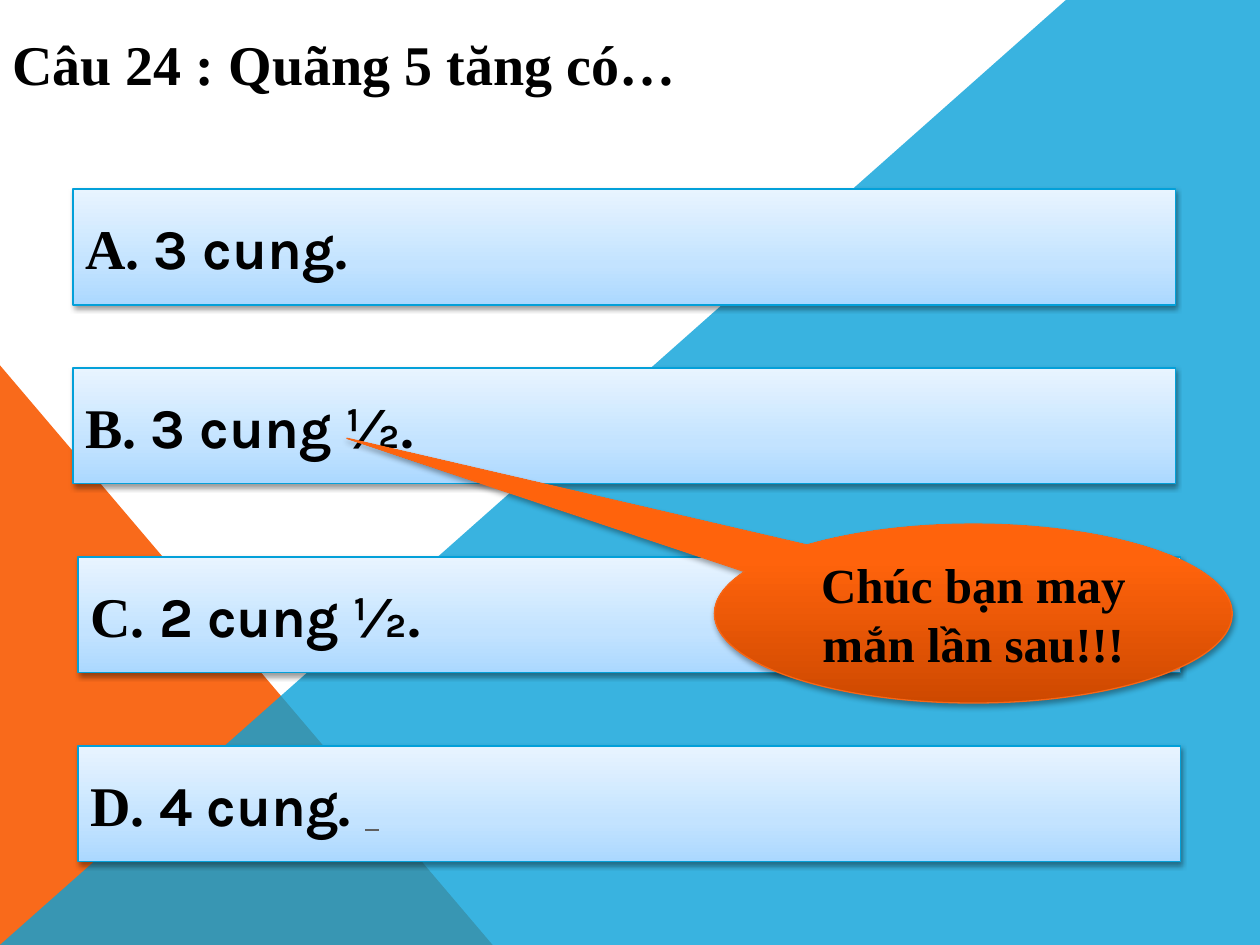
"""Build the quiz slide about the major fifth, with four answers and a callout."""
from dataclasses import dataclass

from lxml.etree import SubElement
from pptx import Presentation
from pptx.dml.color import RGBColor
from pptx.enum.shapes import MSO_SHAPE
from pptx.enum.text import MSO_ANCHOR, PP_ALIGN
from pptx.oxml.ns import qn
from pptx.util import Inches, Pt


@dataclass(frozen=True)
class Style:
    stops: tuple[tuple[int, str], ...]
    line: str
    shadow_alpha: int
    shadow_dist: float


@dataclass(frozen=True)
class Theme:
    orange: str = "F96A1B"
    blue: str = "08A1D9"
    ink: str = "000000"
    muted: str = "5F5F5F"
    serif: str = "Times New Roman"
    sans: str = "Karla"
    large: int = 32
    medium: int = 28
    bar: Style = Style(((0, "ABD8FF"), (35, "C3E3FF"), (100, "E8F4FF")), "03A0D9", 38, 1.6)
    callout: Style = Style(((0, "CE4900"), (80, "FF630C"), (100, "FF640E")), "F96615", 35, 1.8)


@dataclass(frozen=True)
class Answer:
    letter: str
    text: str
    left: float
    top: float


THEME = Theme()
ANSWERS = (
    Answer("A. ", "3 cung.", 0.58, 1.5),
    Answer("B. ", "3 cung ½.", 0.58, 2.92),
    Answer("C. ", "2 cung ½.", 0.62, 4.42),
    Answer("D. ", "4 cung. ", 0.62, 5.92),
)


def fill_plain(sp, color: str, alpha: int = 100) -> None:
    sp.shadow.inherit = False
    sp.fill.solid()
    sp.fill.fore_color.rgb = RGBColor.from_string(color)
    sp.line.fill.background()
    if alpha < 100:
        clr = sp._element.spPr.find(qn("a:solidFill"))[0]
        SubElement(clr, qn("a:alpha"), val=str(alpha * 1000))


def apply_style(sp, style: Style) -> None:
    sp.fill.gradient()
    sp.fill.gradient_angle = 90
    sp.line.color.rgb = RGBColor.from_string(style.line)
    sp.line.width = Pt(0.75)
    sp.shadow.inherit = False
    spPr = sp._element.spPr
    stops = spPr.find(qn("a:gradFill")).find(qn("a:gsLst"))
    for gs in list(stops):
        stops.remove(gs)
    for pos, color in style.stops:
        gs = SubElement(stops, qn("a:gs"), pos=str(pos * 1000))
        SubElement(gs, qn("a:srgbClr"), val=color)
    shadow = SubElement(
        spPr.find(qn("a:effectLst")), qn("a:outerShdw"), blurRad=str(Pt(3.1)),
        dist=str(Pt(style.shadow_dist)), dir="5400000", rotWithShape="0")
    clr = SubElement(shadow, qn("a:srgbClr"), val=THEME.ink)
    SubElement(clr, qn("a:alpha"), val=str(style.shadow_alpha * 1000))


def add_run(p, text: str, font: str, size: int, color: str = THEME.ink):
    r = p.add_run()
    r.text = text
    r.font.name = font
    r.font.size = Pt(size)
    r.font.bold = True
    r.font.color.rgb = RGBColor.from_string(color)
    return r


def first_paragraph(sp, align: PP_ALIGN = PP_ALIGN.LEFT):
    tf = sp.text_frame
    tf.word_wrap = True
    tf.vertical_anchor = MSO_ANCHOR.MIDDLE
    p = tf.paragraphs[0]
    p.alignment = align
    return p


def add_background(s) -> None:
    sp = s.shapes.add_shape(
        MSO_SHAPE.RIGHT_TRIANGLE, Inches(0), Inches(2.9), Inches(3.91), Inches(4.6))
    fill_plain(sp, THEME.orange)
    ff = s.shapes.build_freeform(Inches(0), Inches(7.5))
    ff.add_line_segments(
        [(Inches(x), Inches(y)) for x, y in ((8.46, 0), (10, 0), (10, 7.5))], close=True)
    fill_plain(ff.convert_to_shape(), THEME.blue, 80)


def add_title(s, text: str) -> None:
    sp = s.shapes.add_textbox(Inches(0), Inches(0), Inches(10), Inches(1))
    add_run(first_paragraph(sp), text, THEME.serif, THEME.large)


def add_answer(s, answer: Answer):
    sp = s.shapes.add_shape(
        MSO_SHAPE.RECTANGLE, Inches(answer.left), Inches(answer.top),
        Inches(8.75), Inches(0.92))
    apply_style(sp, THEME.bar)
    p = first_paragraph(sp)
    add_run(p, answer.letter, THEME.serif, THEME.large)
    add_run(p, answer.text, THEME.sans, THEME.large)
    return p


def add_callout(s, text: str) -> None:
    sp = s.shapes.add_shape(
        MSO_SHAPE.OVAL_CALLOUT, Inches(5.67), Inches(4.16), Inches(4.11), Inches(1.42))
    sp.adjustments[0] = -1.21
    sp.adjustments[1] = -0.98
    apply_style(sp, THEME.callout)
    add_run(first_paragraph(sp, PP_ALIGN.CENTER), text, THEME.serif, THEME.medium)


def main() -> None:
    prs = Presentation()
    prs.slide_width, prs.slide_height = Inches(10), Inches(7.5)
    s = prs.slides.add_slide(prs.slide_layouts[6])
    add_background(s)
    add_title(s, "Câu 24 : Quãng 5 tăng có…")
    for answer in ANSWERS:
        p = add_answer(s, answer)
    add_run(p, " ", THEME.sans, THEME.large, THEME.muted).font.underline = True
    add_callout(s, "Chúc bạn may mắn lần sau!!!")
    prs.save("out.pptx")


if __name__ == "__main__":
    main()
